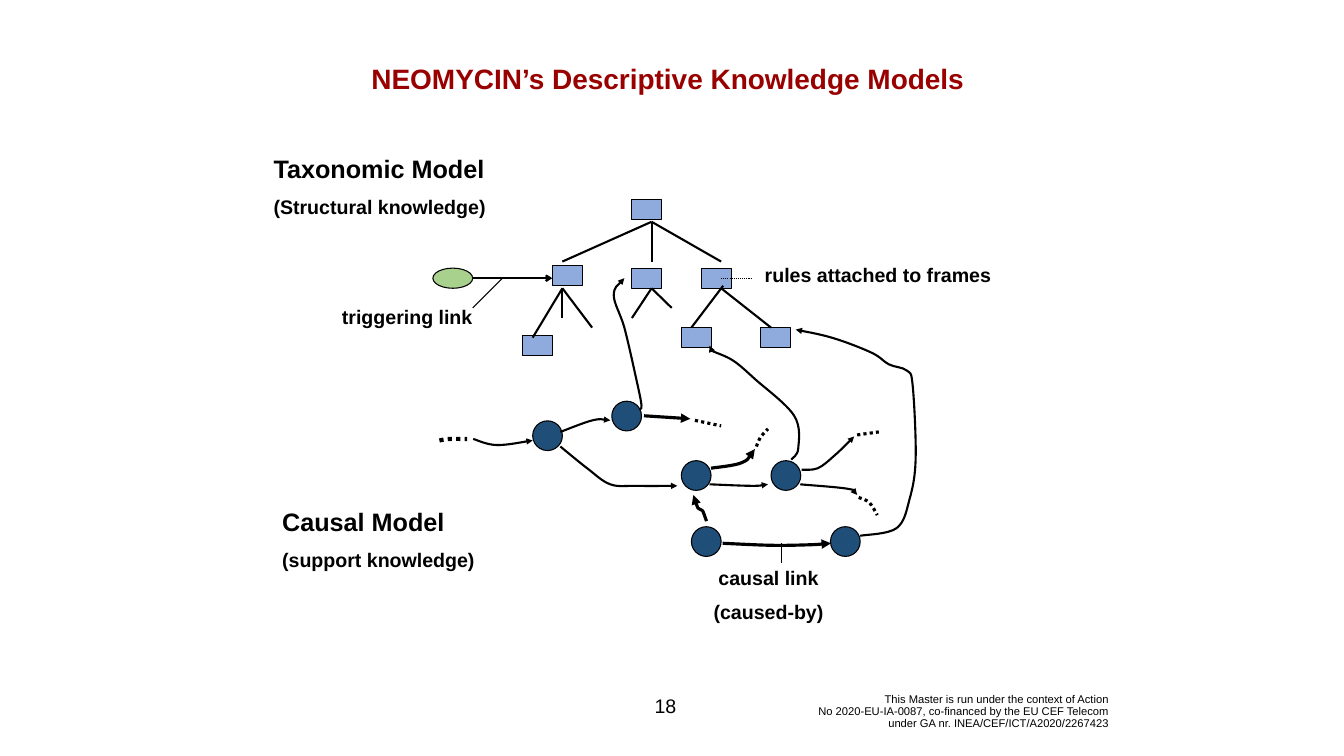
from pptx import Presentation
from pptx.dml.color import RGBColor
from pptx.enum.dml import MSO_LINE
from pptx.enum.shapes import MSO_CONNECTOR, MSO_SHAPE
from pptx.enum.text import MSO_ANCHOR, PP_ALIGN as ALIGN
from pptx.oxml.ns import qn
from pptx.util import Inches, Pt
from lxml import etree

THEME = {
    "font": "Arial", "ink": "000000", "title": "990000",
    "frame": "8FAADC", "cause": "1F4E79", "trigger": "A9D18E",
    "title_size": 40, "heading_size": 36, "label_size": 28, "footer_size": 16,
    "thin": 1.5, "medium": 3, "thick": 4.5, "heavy": 6, "paragraph_gap": 16,
}

# Content: left and top of each frame and each cause
FRAMES = [(12.54, 3.96), (10.96, 5.27), (12.54, 5.32), (13.92, 5.32),
          (15.1, 6.5), (13.52, 6.5), (10.37, 6.65)]
FRAME_SIZE = (0.59, 0.4)
CAUSES = [(12.14, 7.96), (13.52, 9.14), (13.72, 10.45), (16.48, 10.45),
          (15.3, 9.14), (10.57, 8.35)]
CAUSE_SIZE = (0.59, 0.59)
TRIGGER = (8.59, 5.32)
TRIGGER_SIZE = (0.79, 0.4)

# Branches of the taxonomy: start, then ends
BRANCHES = [
    ((12.93, 4.4), [(12.93, 5.19), (14.31, 5.19), (11.16, 5.19)]),
    ((14.35, 5.67), [(13.72, 6.5)]),
    ((14.31, 5.72), [(15.3, 6.5)]),
    ((12.93, 5.72), [(12.54, 6.31), (13.33, 6.11)]),
    ((11.16, 5.72), [(10.57, 6.7), (11.16, 6.31), (11.75, 6.5)]),
]

# Points that each curve passes through
CAUSAL_LINKS = [
    [(9.39, 8.71), (9.85, 8.83), (10.57, 8.74)],
    [(11.12, 8.86), (11.65, 9.29), (12.11, 9.61), (12.63, 9.64), (13.44, 9.64)],
    [(12.68, 8.12), (12.73, 8.04), (12.62, 7.49), (12.39, 6.5), (12.18, 5.86), (12.39, 5.52)],
    [(11.12, 8.57), (11.76, 8.34), (12.11, 8.34)],
    [(14.08, 9.61), (14.92, 9.64), (15.24, 9.61)],
    [(15.7, 9.12), (15.84, 8.9), (15.76, 8.25), (14.98, 7.52), (14.54, 7.15),
     (14.11, 6.95), (14.08, 6.86)],
    [(15.91, 9.32), (16.23, 9.29), (16.57, 9.03), (16.95, 8.66)],
    [(15.88, 9.61), (16.83, 9.7), (17.01, 9.82)],
    [(17.07, 10.63), (17.79, 10.48), (18.05, 9.9), (18.17, 9.09), (18.11, 7.64),
     (17.99, 7.35), (17.64, 7.23), (17.3, 7), (16.54, 6.71), (15.79, 6.54)],
]
STRONG_LINKS = [
    [(12.78, 8.25), (13.7, 8.31)],
    [(14.11, 9.29), (14.72, 9.18), (14.98, 8.91)],
    [(14.02, 10.34), (13.94, 10.13), (13.85, 10.08), (13.76, 9.82)],
    [(14.34, 10.78), (15.3, 10.82), (16.05, 10.81), (16.49, 10.78)],
]
LEADING_DOTS = [[(8.72, 8.74), (8.9, 8.71), (9.27, 8.71)]]
TRAILING_DOTS = [
    [(13.79, 8.34), (14.31, 8.45)],
    [(15.01, 8.86), (15.09, 8.68), (15.24, 8.51)],
    [(17.01, 8.63), (17.44, 8.57)],
    [(17.04, 9.87), (17.25, 9.97), (17.41, 10.22)],
]

# Texts: box, (text, size) for each paragraph, format
HEADING, LABEL = THEME["heading_size"], THEME["label_size"]
TEXTS = [
    ((5.5, 1.17, 15.5, 0.77), [("NEOMYCIN’s Descriptive Knowledge Models", THEME["title_size"])],
     {"align": ALIGN.CENTER, "color": THEME["title"]}),
    ((5.33, 3, 5.5, 1.41), [("Taxonomic Model", HEADING), ("(Structural knowledge)", LABEL)], {}),
    ((5.5, 10, 5.5, 1.41), [("Causal Model", HEADING), ("(support knowledge)", LABEL)], {}),
    ((12.5, 11.17, 5.5, 1.28), [("causal link", LABEL), ("(caused-by)", LABEL)],
     {"align": ALIGN.CENTER}),
    ((5.33, 6, 5.5, 0.57), [("triggering link", LABEL)], {"align": ALIGN.CENTER}),
    ((14.67, 5.17, 5.5, 0.57), [("rules attached to frames", LABEL)], {"align": ALIGN.CENTER}),
    ((12.65, 13.61, 1.11, 0.8), [("18", LABEL)],
     {"align": ALIGN.CENTER, "bold": False, "anchor": MSO_ANCHOR.MIDDLE}),
    ((15.02, 13.74, 7.08, 0.76),
     [("This Master is run under the context of Action\v"
       "No 2020-EU-IA-0087, co-financed by the EU CEF Telecom\v"
       "under GA nr. INEA/CEF/ICT/A2020/2267423", THEME["footer_size"])],
     {"align": ALIGN.RIGHT, "bold": False, "anchor": MSO_ANCHOR.MIDDLE, "spacing": 0.9}),
]

presentation = Presentation()
presentation.slide_width, presentation.slide_height = Inches(26.67), Inches(15)
slide = presentation.slides.add_slide(presentation.slide_layouts[6])


def add_text(box, paragraphs, *, align=ALIGN.LEFT, color=THEME["ink"], bold=True,
             anchor=MSO_ANCHOR.TOP, spacing=None):
    frame = slide.shapes.add_textbox(*map(Inches, box)).text_frame
    frame.word_wrap, frame.vertical_anchor = True, anchor
    for index, (text, size) in enumerate(paragraphs):
        paragraph = frame.add_paragraph() if index else frame.paragraphs[0]
        paragraph.text, paragraph.alignment = text, align
        if index:
            paragraph.space_before = Pt(THEME["paragraph_gap"])
        if spacing:
            paragraph.line_spacing = spacing
        for run in paragraph.runs:
            run.font.name, run.font.size, run.font.bold = THEME["font"], Pt(size), bold
            run.font.color.rgb = RGBColor.from_string(color)


def style_line(line, width, dotted=False, tail=None):
    line.color.rgb = RGBColor.from_string(THEME["ink"])
    line.width = Pt(width)
    if dotted:
        line.dash_style = MSO_LINE.ROUND_DOT
    if tail:
        etree.SubElement(line._get_or_add_ln(), qn("a:tailEnd"), type=tail)


def add_node(kind, position, size, fill):
    shape = slide.shapes.add_shape(kind, *map(Inches, position + size))
    shape.shadow.inherit = False
    shape.fill.solid()
    shape.fill.fore_color.rgb = RGBColor.from_string(fill)
    style_line(shape.line, THEME["thin"])


def add_line(start, end, width, **style):
    connector = slide.shapes.add_connector(MSO_CONNECTOR.STRAIGHT, *map(Inches, start + end))
    style_line(connector.line, width, **style)
    etree.SubElement(connector._element.spPr, qn("a:effectLst"))


def bezier_points(points):
    """Give two control points and an end for each step of a smooth curve."""
    padded = [points[0], *points, points[-1]]
    result = []
    for before, start, end, after in zip(padded, padded[1:], padded[2:], padded[3:]):
        result.append(tuple(s + (e - b) / 6 for b, s, e in zip(before, start, end)))
        result.append(tuple(e - (a - s) / 6 for s, e, a in zip(start, end, after)))
        result.append(end)
    return result


def add_curve(points, width, **style):
    builder = slide.shapes.build_freeform(*map(Inches, points[0]))
    builder.add_line_segments([tuple(map(Inches, point)) for point in bezier_points(points)],
                              close=False)
    shape = builder.convert_to_shape()
    shape.shadow.inherit = False
    shape.fill.background()
    style_line(shape.line, width, **style)
    # Turn each three straight segments into one Bézier segment
    outline = shape._element.spPr.find(".//" + qn("a:path"))
    segments = outline.findall(qn("a:lnTo"))
    for first in range(0, len(segments), 3):
        bezier = etree.SubElement(outline, qn("a:cubicBezTo"))
        for segment in segments[first:first + 3]:
            bezier.append(segment[0])
            outline.remove(segment)


# Taxonomy
for position in FRAMES:
    add_node(MSO_SHAPE.RECTANGLE, position, FRAME_SIZE, THEME["frame"])
for start, ends in BRANCHES:
    for end in ends:
        add_line(start, end, THEME["medium"])

# Causal network
for position in CAUSES:
    add_node(MSO_SHAPE.OVAL, position, CAUSE_SIZE, THEME["cause"])
for curves, width, style in [
    (CAUSAL_LINKS, THEME["medium"], {"tail": "triangle"}),
    (STRONG_LINKS, THEME["thick"], {"tail": "triangle"}),
    (LEADING_DOTS, THEME["heavy"], {"dotted": True}),
    (TRAILING_DOTS, THEME["thick"], {"dotted": True}),
]:
    for curve in curves:
        add_curve(curve, width, **style)

# Trigger and the leaders of the labels
add_node(MSO_SHAPE.OVAL, TRIGGER, TRIGGER_SIZE, THEME["trigger"])
add_line((9.38, 5.52), (10.96, 5.52), THEME["medium"], tail="arrow")
add_line((14.31, 5.52), (14.9, 5.52), THEME["thin"], dotted=True)
add_line((9.38, 6.11), (9.97, 5.52), THEME["thin"])
add_line((15.5, 11.17), (15.5, 10.77), THEME["thin"])

# Title, headings, labels and footer
for box, paragraphs, style in TEXTS:
    add_text(box, paragraphs, **style)

presentation.save("out.pptx")
